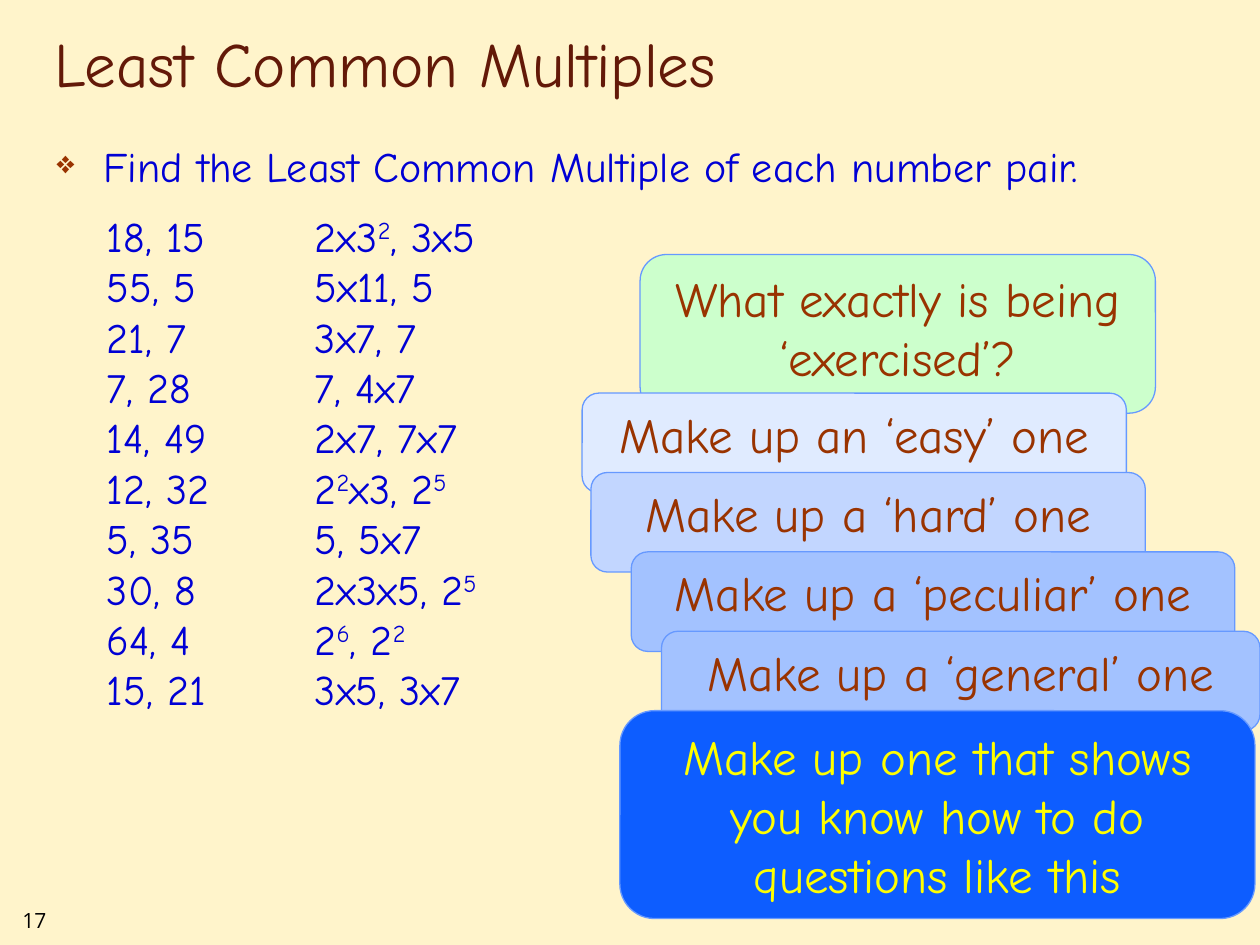
from lxml import etree
from pptx import Presentation
from pptx.dml.color import RGBColor
from pptx.enum import shapes, text
from pptx.oxml import ns
from pptx.util import Pt

CREAM = RGBColor(0xFF, 0xF4, 0xCB)
BROWN = RGBColor(0x63, 0x19, 0x08)
RUST = RGBColor(0x99, 0x33, 0x00)
NAVY = RGBColor(0x00, 0x00, 0xD4)
BLACK = RGBColor(0x00, 0x00, 0x00)
YELLOW = RGBColor(0xFF, 0xFF, 0x00)
EDGE = RGBColor(0x66, 0x99, 0xFF)
GREEN = RGBColor(0xCC, 0xFF, 0xCC)
PALE = RGBColor(0xE0, 0xEB, 0xFF)
LIGHT = RGBColor(0xC2, 0xD6, 0xFF)
MID = RGBColor(0xA3, 0xC2, 0xFF)
BLUE = RGBColor(0x0D, 0x5D, 0xFF)
FONT = "Comic Neue"

PAIRS = ["18, 15", "55, 5", "21, 7", "7, 28", "14, 49",
         "12, 32", "5, 35", "30, 8", "64, 4", "15, 21"]
# A caret marks the digit after it as an exponent.
FACTORS = ["2x3^2, 3x5", "5x11, 5", "3x7, 7", "7, 4x7", "2x7, 7x7",
           "2^2x3, 2^5", "5, 5x7", "2x3x5, 2^5", "2^6, 2^2", "3x5, 3x7"]

# Left, width, height, fill, text colour, words
TASKS = [
    (332.64, 311, 56.88, PALE, RUST, "Make up an ‘easy’ one"),
    (337.68, 316.8, 56.88, LIGHT, RUST, "Make up a ‘hard’ one"),
    (360.72, 344.88, 56.88, MID, RUST, "Make up a ‘peculiar’ one"),
    (378, 342, 56.88, MID, RUST, "Make up a ‘general’ one"),
    (354.24, 362.88, 118.8, BLUE, YELLOW,
     "Make up one that shows you know how to do questions like this"),
]
TASK_TOP, TASK_STEP = 224.64, 45.36


def add_run(para, words, size, color, font=FONT, raised=False):
    run = para.add_run()
    run.text = words
    run.font.size = Pt(size)
    run.font.name = font
    run.font.color.rgb = color
    if raised:
        run.font._element.set("baseline", "30000")


def add_line(para, line, size, color, font=FONT):
    """Add a line, raising each digit that follows a caret."""
    first, *rest = line.split("^")
    add_run(para, first, size, color, font)
    for part in rest:
        add_run(para, part[0], size, color, font, raised=True)
        if part[1:]:
            add_run(para, part[1:], size, color, font)


def add_text(slide, box, lines, size, color, font=FONT,
             anchor=text.MSO_ANCHOR.TOP):
    frame = slide.shapes.add_textbox(*map(Pt, box)).text_frame
    frame.word_wrap = True
    frame.vertical_anchor = anchor
    for i, line in enumerate(lines):
        para = frame.add_paragraph() if i else frame.paragraphs[0]
        add_line(para, line, size, color, font)
    return frame


def add_bullet(para, mark, color, indent):
    props = para._p.get_or_add_pPr()
    props.set("marL", str(Pt(indent)))
    props.set("indent", str(-Pt(indent)))
    tint = etree.SubElement(props, ns.qn("a:buClr"))
    etree.SubElement(tint, ns.qn("a:srgbClr"), val=str(color))
    etree.SubElement(props, ns.qn("a:buSzPct"), val="75000")
    etree.SubElement(props, ns.qn("a:buChar"), char=mark)


def add_card(slide, box, fill, color, words):
    card = slide.shapes.add_shape(
        shapes.MSO_SHAPE.ROUNDED_RECTANGLE, *map(Pt, box))
    card.shadow.inherit = False
    card.fill.solid()
    card.fill.fore_color.rgb = fill
    card.line.color.rgb = EDGE
    card.line.width = Pt(0.75)
    frame = card.text_frame
    frame.word_wrap = True
    frame.vertical_anchor = text.MSO_ANCHOR.TOP
    para = frame.paragraphs[0]
    para.alignment = text.PP_ALIGN.CENTER
    add_run(para, words, 28, color)


def main():
    deck = Presentation()
    deck.slide_width, deck.slide_height = Pt(720), Pt(540)
    slide = deck.slides.add_slide(deck.slide_layouts[6])
    back = slide.background.fill
    back.solid()
    back.fore_color.rgb = CREAM

    add_text(slide, (5.76, 514.8, 54, 21.6), ["17"], 12, BLACK, "Open Sans")
    add_text(slide, (24, 12.24, 612, 48.24), ["Least Common Multiples"],
             36, BROWN, anchor=text.MSO_ANCHOR.BOTTOM)

    add_card(slide, (365.76, 145.44, 294.48, 90.72), GREEN, RUST,
             "What exactly is being ‘exercised’?")
    for i, (left, width, height, fill, color, words) in enumerate(TASKS):
        box = (left, TASK_TOP + i * TASK_STEP, width, height)
        add_card(slide, box, fill, color, words)

    add_text(slide, (54, 116.64, 102.24, 326.88), PAIRS, 24, NAVY)
    add_text(slide, (172.8, 116.64, 203.76, 326.88), FACTORS, 24, NAVY)
    prompt = add_text(
        slide, (25.2, 77.04, 668.88, 45.36),
        ["Find the Least Common Multiple of each number pair."], 24, NAVY)
    add_bullet(prompt.paragraphs[0], "❖", RUST, 27)

    deck.save("out.pptx")


if __name__ == "__main__":
    main()
